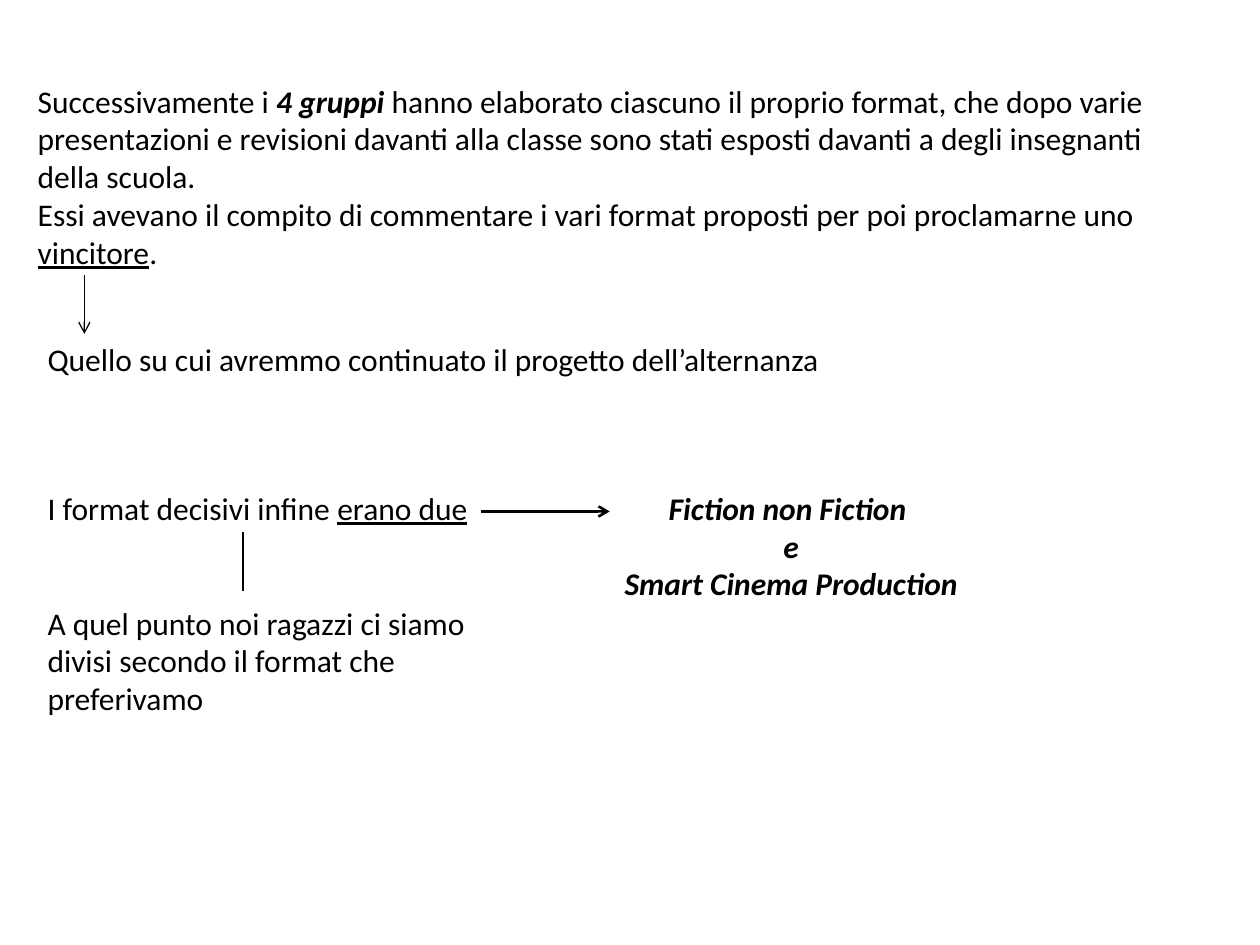
import pptx
import pptx.dml.color
import pptx.enum.shapes
import pptx.enum.text
import pptx.oxml
import pptx.oxml.ns
import pptx.util
from pptx.util import Cm


def colour(hex_code):
    return pptx.dml.color.RGBColor.from_string(hex_code)


def add_words(paragraph, text, font="Calibri", size=18, ink="000000",
              bold=False, italic=False, underline=False):
    run = paragraph.add_run()
    run.text = text
    run.font.name = font
    run.font.size = pptx.util.Pt(size)
    run.font.color.rgb = colour(ink)
    run.font.bold = bold
    run.font.italic = italic
    run.font.underline = underline


class Page:
    font = "Calibri"
    size = 18
    ink = "000000"

    def __init__(self, slide):
        self.slide = slide

    def text(self, left, top, width, height, wrap=True):
        box = self.slide.shapes.add_textbox(Cm(left), Cm(top), Cm(width), Cm(height))
        box.text_frame.word_wrap = wrap
        box.text_frame.auto_size = pptx.enum.text.MSO_AUTO_SIZE.SHAPE_TO_FIT_TEXT
        return box.text_frame

    def words(self, paragraph, text, **emphasis):
        add_words(paragraph, text, font=self.font, size=self.size, ink=self.ink, **emphasis)

    def line(self, x1, y1, x2, y2, weight=0.75, arrow=False):
        connector = self.slide.shapes.add_connector(
            pptx.enum.shapes.MSO_CONNECTOR.STRAIGHT, Cm(x1), Cm(y1), Cm(x2), Cm(y2))
        connector.line.color.rgb = colour(self.ink)
        connector.line.width = pptx.util.Pt(weight)
        namespace = pptx.oxml.ns.nsdecls("a")
        properties = connector._element.spPr
        if arrow:
            properties.find(pptx.oxml.ns.qn("a:ln")).append(
                pptx.oxml.parse_xml(f'<a:tailEnd {namespace} type="arrow"/>'))
        properties.append(pptx.oxml.parse_xml(f"<a:effectLst {namespace}/>"))


def main():
    deck = pptx.Presentation()
    deck.slide_width, deck.slide_height = Cm(25.4), Cm(19.05)
    page = Page(deck.slides.add_slide(deck.slide_layouts[6]))

    story = page.text(0.51, 1.52, 23.11, 4.11).paragraphs[0]
    page.words(story, "Successivamente i ")
    page.words(story, "4 gruppi ", bold=True, italic=True)
    page.words(story, "hanno elaborato ciascuno il proprio format, che dopo varie presentazioni "
                      "e revisioni davanti alla classe sono stati esposti davanti a degli "
                      "insegnanti della scuola. ")
    story.add_line_break()
    page.words(story, "Essi avevano il compito di commentare i vari format proposti "
                      "per poi proclamarne uno ")
    page.words(story, "vincitore", underline=True)
    page.words(story, ".")

    page.line(1.7, 5.54, 1.7, 6.73, arrow=True)
    winner = page.text(0.71, 6.73, 16.26, 1.02, wrap=False).paragraphs[0]
    page.words(winner, "Quello su cui avremmo continuato il progetto dell’alternanza")

    choice = page.text(0.71, 9.73, 10.01, 4.88)
    finalists = choice.paragraphs[0]
    page.words(finalists, "I format decisivi infine ")
    page.words(finalists, "erano due", underline=True)
    division = choice.add_paragraph()
    division.space_before = pptx.util.Pt(44)
    page.words(division, "A quel punto noi ragazzi ci siamo divisi secondo il format "
                         "che preferivamo")

    page.line(9.7, 10.31, 12.29, 10.31, weight=1.5, arrow=True)
    titles = page.text(12.29, 9.73, 7.32, 2.57, wrap=False)
    first_title, second_title = titles.paragraphs[0], titles.add_paragraph()
    for title in (first_title, second_title):
        title.alignment = pptx.enum.text.PP_ALIGN.CENTER
    page.words(first_title, "Fiction non Fiction ", bold=True, italic=True)
    first_title.add_line_break()
    page.words(first_title, "e", bold=True, italic=True)
    page.words(second_title, "Smart Cinema Production", bold=True, italic=True)

    page.line(4.9, 10.72, 4.9, 11.91)
    deck.save("out.pptx")


if __name__ == "__main__":
    main()
